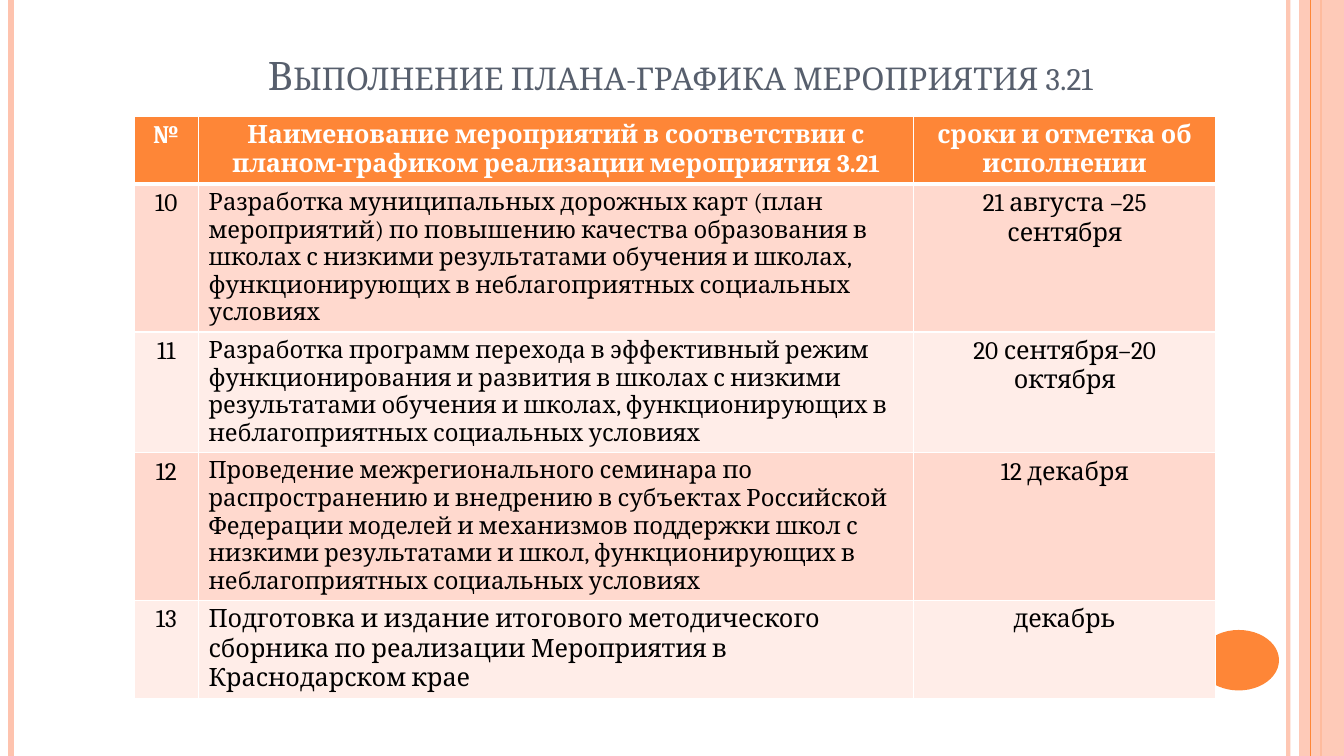
from lxml.etree import SubElement
from pptx import Presentation
from pptx.dml.color import RGBColor
from pptx.enum.shapes import MSO_CONNECTOR, MSO_SHAPE
from pptx.enum.text import MSO_ANCHOR, MSO_AUTO_SIZE, PP_ALIGN
from pptx.oxml.ns import qn
from pptx.util import Pt

ORANGE = RGBColor(0xFE, 0x86, 0x37)
PEACH = RGBColor(0xFE, 0xC3, 0xAE)
SLATE = RGBColor(0x57, 0x5F, 0x6D)
BAND_DARK = RGBColor(0xFF, 0xD9, 0xCE)
BAND_LIGHT = RGBColor(0xFF, 0xED, 0xE8)
WHITE = RGBColor(0xFF, 0xFF, 0xFF)
BLACK = RGBColor(0, 0, 0)

FONT = "Cambria"
PAGE_WIDTH, PAGE_HEIGHT = 960, 540
COLUMN_WIDTHS = (46, 511, 215.5)
ROW_HEIGHTS = (48, 105, 86, 105, 70)

HEADER = (
    "№",
    "Наименование мероприятий в соответствии с планом-графиком реализации мероприятия 3.21",
    "сроки и отметка об исполнении",
)
EVENTS = (
    ("10", "Разработка муниципальных дорожных карт (план мероприятий) по повышению "
     "качества образования в школах с низкими результатами обучения и школах, "
     "функционирующих в неблагоприятных социальных условиях",
     "21 августа –25 сентября", 17),
    ("11", "Разработка программ перехода в эффективный режим функционирования и "
     "развития в школах с низкими результатами обучения и школах, "
     "функционирующих в неблагоприятных социальных условиях",
     "20 сентября–20 октября", 17),
    ("12", "Проведение межрегионального семинара по распространению и внедрению в "
     "субъектах Российской Федерации моделей и механизмов поддержки школ с низкими "
     "результатами и школ, функционирующих в неблагоприятных социальных условиях",
     "12 декабря", 17),
    ("13", "Подготовка и издание итогового методического сборника по реализации "
     "Мероприятия в Краснодарском крае", "декабрь", 18),
)


def write_text(frame, text, size=18, color=BLACK, bold=False,
               align=PP_ALIGN.CENTER, small_caps=False):
    para = frame.paragraphs[0]
    para.alignment = align
    span = para.add_run()
    span.text = text
    span.font.name = FONT
    span.font.size = Pt(size)
    span.font.bold = bold
    span.font.color.rgb = color
    if small_caps:
        span.font._element.set("cap", "small")


def set_opacity(fill, percent):
    color = fill._xPr.find(qn("a:solidFill"))[0]
    SubElement(color, qn("a:alpha"), val=str(percent * 1000))


def add_stripe(page, x, width, color, opacity=100):
    stripe = page.shapes.add_connector(
        MSO_CONNECTOR.STRAIGHT, Pt(x), Pt(0), Pt(x), Pt(PAGE_HEIGHT))
    stripe.line.width = Pt(width)
    stripe.line.color.rgb = color
    if opacity < 100:
        set_opacity(stripe.line.fill, opacity)
    SubElement(stripe._element.spPr, qn("a:effectLst"))


def add_filled(page, kind, left, top, width, height, color, opacity=100):
    shape = page.shapes.add_shape(kind, Pt(left), Pt(top), Pt(width), Pt(height))
    shape.shadow.inherit = False
    shape.fill.solid()
    shape.fill.fore_color.rgb = color
    shape.line.fill.background()
    if opacity < 100:
        set_opacity(shape.fill, opacity)


def add_decoration(page):
    add_stripe(page, 920.2, 3, PEACH, opacity=93)
    add_stripe(page, 7.9, 4.5, PEACH)
    add_stripe(page, 943.9, 1.5, ORANGE)
    add_filled(page, MSO_SHAPE.RECTANGLE, 928, 0, 32, PAGE_HEIGHT, PEACH, opacity=87)
    add_stripe(page, 936, 0.75, ORANGE)
    add_filled(page, MSO_SHAPE.OVAL, 856, 450, 57.6, 43.2, ORANGE)


def set_title(page, text):
    title = page.shapes.title
    title.left, title.top, title.width, title.height = Pt(108), Pt(22.3), Pt(756), Pt(51.8)
    frame = title.text_frame
    frame.word_wrap = True
    frame.auto_size = MSO_AUTO_SIZE.NONE
    frame.vertical_anchor = MSO_ANCHOR.BOTTOM
    write_text(frame, text, size=28, color=SLATE, small_caps=True)


def set_borders(cell, top=1, bottom=1):
    properties = cell._tc.get_or_add_tcPr()
    for side, width in (("L", 1), ("R", 1), ("T", top), ("B", bottom)):
        edge = SubElement(properties, qn(f"a:ln{side}"), w=str(Pt(width)))
        fill = SubElement(edge, qn("a:solidFill"))
        SubElement(fill, qn("a:srgbClr"), val=str(WHITE))


def fill_cell(cell, text, fill, top=1, bottom=1, **text_format):
    set_borders(cell, top, bottom)
    cell.fill.solid()
    cell.fill.fore_color.rgb = fill
    write_text(cell.text_frame, text, **text_format)


def add_schedule(page):
    table = page.shapes.add_table(
        len(ROW_HEIGHTS), len(COLUMN_WIDTHS), Pt(95.8), Pt(82.8),
        Pt(sum(COLUMN_WIDTHS)), Pt(sum(ROW_HEIGHTS))).table
    for column, width in zip(table.columns, COLUMN_WIDTHS):
        column.width = Pt(width)
    for row, height in zip(table.rows, ROW_HEIGHTS):
        row.height = Pt(height)
    for index, heading in enumerate(HEADER):
        fill_cell(table.cell(0, index), heading, ORANGE, bottom=3, color=WHITE, bold=True)
    for index, (number, event, dates, size) in enumerate(EVENTS, start=1):
        band = BAND_DARK if index % 2 else BAND_LIGHT
        top = 3 if index == 1 else 1
        fill_cell(table.cell(index, 0), number, band, top=top)
        fill_cell(table.cell(index, 1), event, band, top=top, size=size, align=PP_ALIGN.LEFT)
        fill_cell(table.cell(index, 2), dates, band, top=top)


def main():
    deck = Presentation()
    deck.slide_width, deck.slide_height = Pt(PAGE_WIDTH), Pt(PAGE_HEIGHT)
    page = deck.slides.add_slide(deck.slide_layouts[5])
    add_decoration(page)
    set_title(page, "Выполнение плана-графика мероприятия 3.21")
    add_schedule(page)
    deck.save("out.pptx")


if __name__ == "__main__":
    main()
